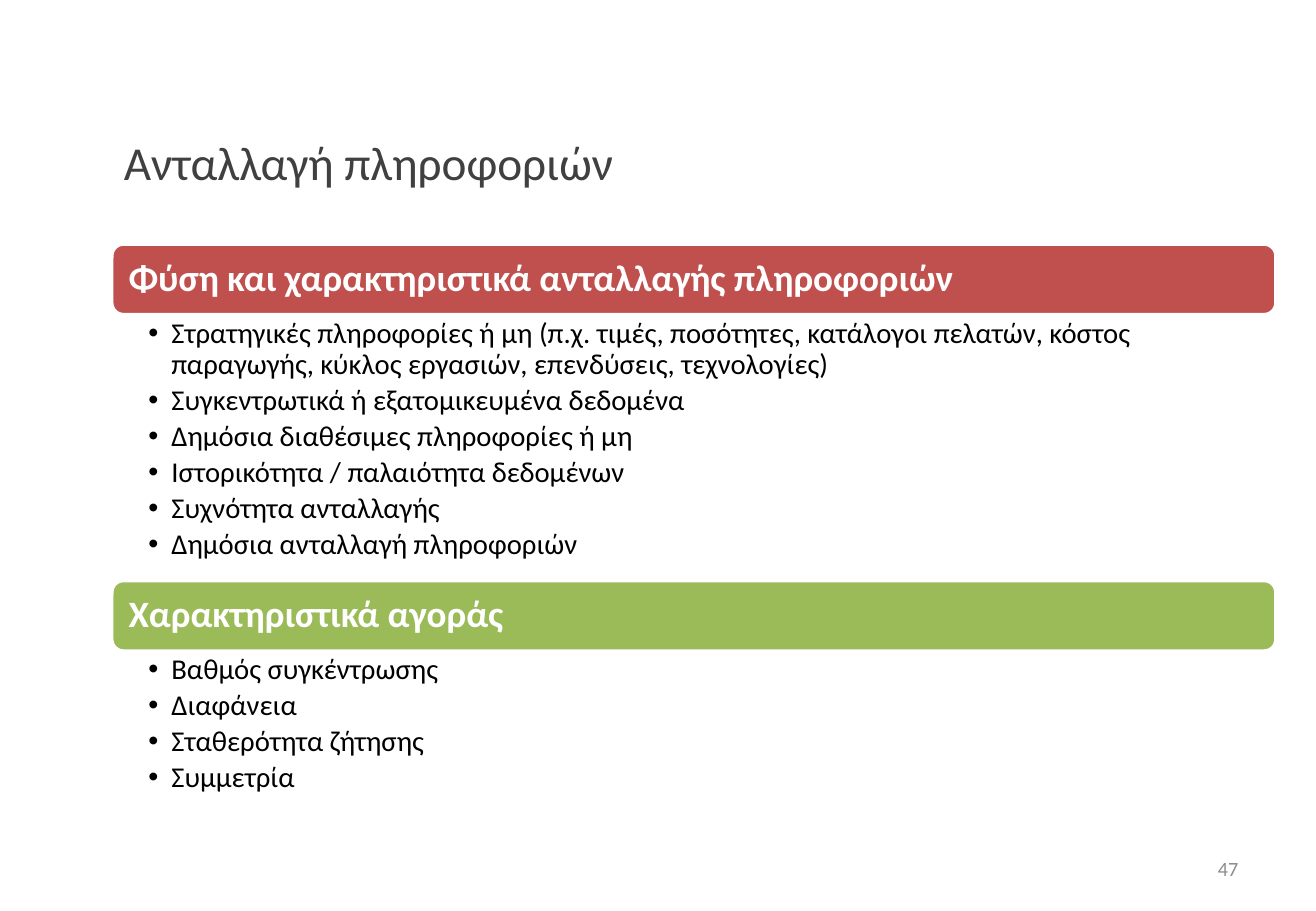
import pptx
import pptx.util
import pptx.dml.color
import pptx.enum.shapes
import pptx.enum.text
import pptx.oxml.ns
from lxml import etree

Inches = pptx.util.Inches
Pt = pptx.util.Pt
ANCHOR = pptx.enum.text.MSO_ANCHOR
ALIGN = pptx.enum.text.PP_ALIGN

TITLE = "Ανταλλαγή πληροφοριών"
PAGE_NUMBER = "47"
SECTIONS = [
    {
        "heading": "Φύση και χαρακτηριστικά ανταλλαγής πληροφοριών",
        "color": "red",
        "height": 2.19,
        "points": [
            "Στρατηγικές πληροφορίες ή μη (π.χ. τιμές, ποσότητες, κατάλογοι πελατών, "
            "κόστος παραγωγής, κύκλος εργασιών, επενδύσεις, τεχνολογίες)",
            "Συγκεντρωτικά ή εξατομικευμένα δεδομένα",
            "Δημόσια διαθέσιμες πληροφορίες ή μη",
            "Ιστορικότητα / παλαιότητα δεδομένων",
            "Συχνότητα ανταλλαγής",
            "Δημόσια ανταλλαγή πληροφοριών",
        ],
    },
    {
        "heading": "Χαρακτηριστικά αγοράς",
        "color": "green",
        "height": 1.29,
        "points": ["Βαθμός συγκέντρωσης", "Διαφάνεια", "Σταθερότητα ζήτησης", "Συμμετρία"],
    },
]

COLORS = {
    "title": "404040",
    "red": "C0504D",
    "green": "9BBB59",
    "white": "FFFFFF",
    "black": "000000",
    "number": "8C8C8C",
}
FONT = "Calibri"
LEFT, WIDTH = 0.92, 9.58
SECTIONS_TOP, BAR_HEIGHT = 2.01, 0.58
BULLET_INDENT = 0.19

FORMATS = {
    "title": {"size": 28, "color": "title", "anchor": ANCHOR.MIDDLE,
              "insets": (0.1, 0.05, 0.1, 0.05), "paragraph": {}},
    "heading": {"size": 22, "color": "white", "bold": True, "anchor": ANCHOR.MIDDLE,
                "insets": (0.11, 0.09, 0.11, 0.09),
                "paragraph": {"alignment": ALIGN.LEFT, "line_spacing": 0.9}},
    "points": {"size": 17, "color": "black", "anchor": ANCHOR.TOP, "bullet": "•",
               "insets": (0.3, 0.03, 0.17, 0.03),
               "paragraph": {"level": 1, "line_spacing": 0.9, "space_after": Pt(3)}},
    "number": {"size": 12, "color": "number", "anchor": ANCHOR.MIDDLE,
               "insets": (0.1, 0.05, 0.1, 0.05),
               "paragraph": {"alignment": ALIGN.RIGHT}},
}


def rgb(name):
    return pptx.dml.color.RGBColor.from_string(COLORS[name])


def add_bullet(paragraph, mark):
    properties = paragraph._p.get_or_add_pPr()
    properties.set("marL", str(Inches(BULLET_INDENT)))
    properties.set("indent", str(-Inches(BULLET_INDENT)))
    for tag, key, value in (("a:buFont", "typeface", "Arial"), ("a:buChar", "char", mark)):
        etree.SubElement(properties, pptx.oxml.ns.qn(tag)).set(key, value)


def write(shape, lines, style):
    frame = shape.text_frame
    frame.word_wrap = True
    frame.vertical_anchor = style["anchor"]
    for side, inset in zip(("left", "top", "right", "bottom"), style["insets"]):
        setattr(frame, f"margin_{side}", Inches(inset))
    for index, line in enumerate(lines):
        paragraph = frame.add_paragraph() if index else frame.paragraphs[0]
        for attribute, value in style["paragraph"].items():
            setattr(paragraph, attribute, value)
        if "bullet" in style:
            add_bullet(paragraph, style["bullet"])
        run = paragraph.add_run()
        run.text = line
        font = {"name": FONT, "size": Pt(style["size"]), "bold": style.get("bold", False)}
        for attribute, value in font.items():
            setattr(run.font, attribute, value)
        run.font.color.rgb = rgb(style["color"])


def add_text(slide, box, lines, kind):
    write(slide.shapes.add_textbox(*map(Inches, box)), lines, FORMATS[kind])


def add_bar(slide, top, section):
    bar = slide.shapes.add_shape(
        pptx.enum.shapes.MSO_SHAPE.ROUNDED_RECTANGLE,
        *map(Inches, (LEFT, top, WIDTH, BAR_HEIGHT)))
    bar.shadow.inherit = False
    bar.fill.solid()
    bar.fill.fore_color.rgb = rgb(section["color"])
    bar.line.color.rgb = rgb("white")
    bar.line.width = Pt(2)
    write(bar, [section["heading"]], FORMATS["heading"])


def main():
    """Build the slide on information exchange."""
    deck = pptx.Presentation()
    deck.slide_width, deck.slide_height = Inches(10.83), Inches(7.5)
    slide = deck.slides.add_slide(deck.slide_layouts[6])
    add_text(slide, (LEFT, 0.85, WIDTH, 0.96), [TITLE], "title")
    top = SECTIONS_TOP
    for section in SECTIONS:
        add_bar(slide, top, section)
        top += BAR_HEIGHT
        add_text(slide, (LEFT, top, WIDTH, section["height"]), section["points"], "points")
        top += section["height"]
    add_text(slide, (7.76, 6.95, 2.53, 0.4), [PAGE_NUMBER], "number")
    deck.save("out.pptx")


if __name__ == "__main__":
    main()
